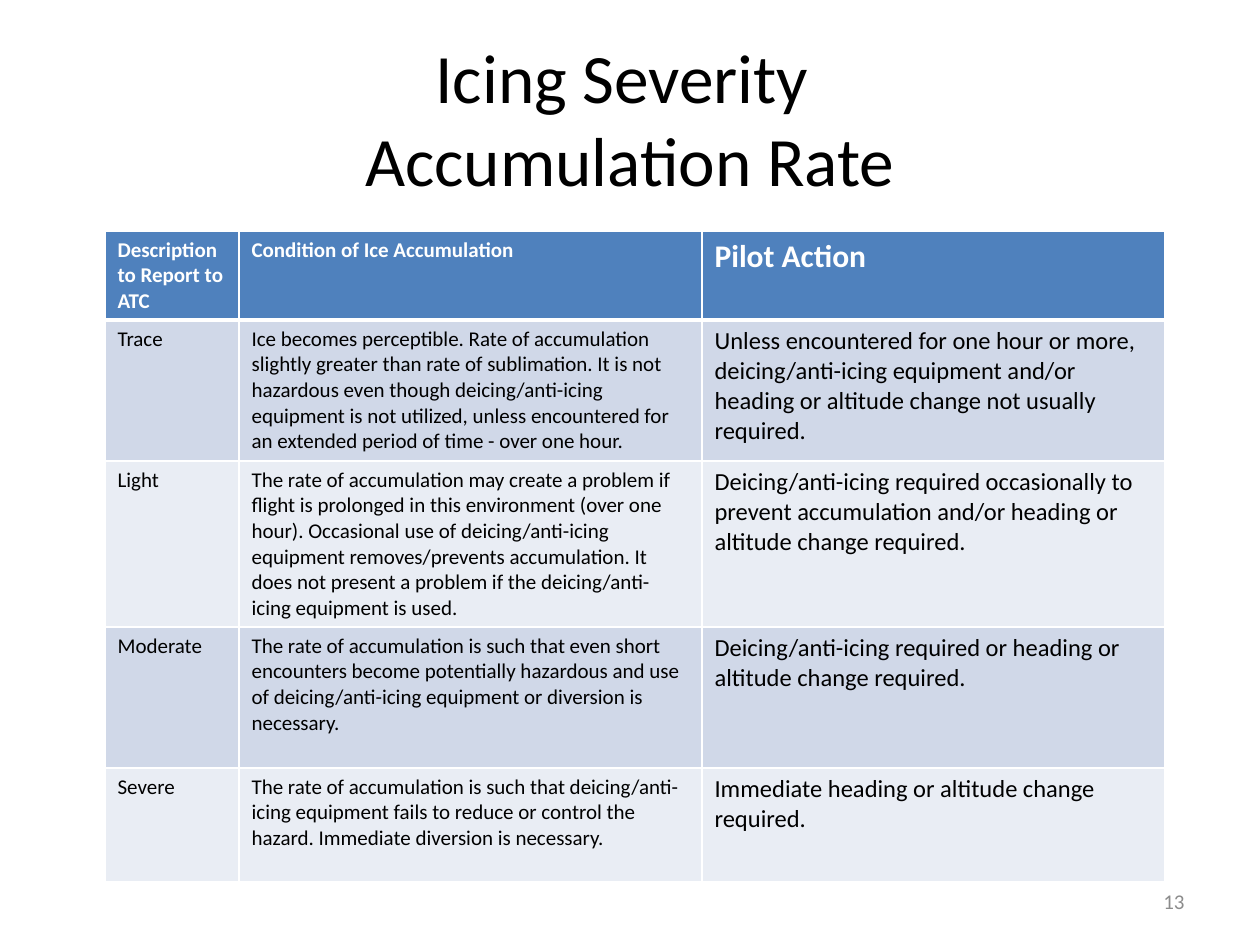
from dataclasses import dataclass

from lxml import etree
from pptx import Presentation
from pptx import util as u
from pptx.dml.color import RGBColor
from pptx.enum import text
from pptx.oxml import ns

EMU_PER_PX = 914400 / 126
FONT = "Calibri"
BLACK, WHITE, GREY = "000000", "FFFFFF", "8C8C8C"
HEADER_FILL = "4F81BD"
BAND_FILLS = ("D0D8E8", "E9EDF4")
TABLE_LEFT, TABLE_TOP = 105, 231
COLUMN_WIDTHS = (134, 463, 463)


@dataclass(frozen=True)
class Severity:
    report: str
    condition: str
    action: str
    height: int


HEADER = Severity(
    "Description to Report to ATC", "Condition of Ice Accumulation", "Pilot Action", 89
)
SEVERITIES = (
    Severity(
        "Trace",
        "Ice becomes perceptible. Rate of accumulation slightly greater than rate of "
        "sublimation. It is not hazardous even though deicing/anti-icing equipment is not "
        "utilized, unless encountered for an extended period of time - over one hour.",
        "Unless encountered for one hour or more, deicing/anti-icing equipment and/or "
        "heading or altitude change not usually required.",
        141,
    ),
    Severity(
        "Light",
        "The rate of accumulation may create a problem if flight is prolonged in this "
        "environment (over one hour). Occasional use of deicing/anti-icing equipment "
        "removes/prevents accumulation. It does not present a problem if the "
        "deicing/anti-icing equipment is used.",
        "Deicing/anti-icing required occasionally to prevent accumulation and/or heading "
        "or altitude change required.",
        166,
    ),
    Severity(
        "Moderate",
        "The rate of accumulation is such that even short encounters become potentially "
        "hazardous and use of deicing/anti-icing equipment or diversion is necessary.",
        "Deicing/anti-icing required or heading or altitude change required.",
        141,
    ),
    Severity(
        "Severe",
        "The rate of accumulation is such that deicing/anti-icing equipment fails to "
        "reduce or control the hazard. Immediate diversion is necessary.",
        "Immediate heading or altitude change required.",
        114,
    ),
)


def px(length: int) -> u.Emu:
    return u.Emu(round(length * EMU_PER_PX))


def color(value: str) -> RGBColor:
    return RGBColor.from_string(value)


def write(frame, content: str, *, size: float, ink: str = BLACK, bold: bool = False,
          align=text.PP_ALIGN.LEFT) -> None:
    frame.word_wrap = True
    frame.text = content
    paragraph = frame.paragraphs[0]
    paragraph.alignment = align
    for run in paragraph.runs:
        run.font.name = FONT
        run.font.size = u.Pt(size)
        run.font.bold = bold
        run.font.color.rgb = color(ink)


def add_label(slide, content: str, left: int, top: int, width: int, height: int,
              **style) -> None:
    frame = slide.shapes.add_textbox(px(left), px(top), px(width), px(height)).text_frame
    frame.vertical_anchor = text.MSO_ANCHOR.MIDDLE
    write(frame, content, **style)


def set_border(cell, side: str, points: int) -> None:
    line = etree.SubElement(
        cell._tc.get_or_add_tcPr(), ns.qn(f"a:ln{side}"), w=str(u.Pt(points))
    )
    fill = etree.SubElement(line, ns.qn("a:solidFill"))
    etree.SubElement(fill, ns.qn("a:srgbClr"), val=WHITE)


def fill_row(table, index: int, severity: Severity) -> None:
    is_header = index == 0
    table.rows[index].height = px(severity.height)
    background = HEADER_FILL if is_header else BAND_FILLS[(index - 1) % 2]
    sizes = (12, 12, 18 if is_header else 14)
    contents = (severity.report, severity.condition, severity.action)
    for column, (content, size) in enumerate(zip(contents, sizes)):
        cell = table.cell(index, column)
        for side in "LRTB":
            thick = (side == "B" and index == 0) or (side == "T" and index == 1)
            set_border(cell, side, 3 if thick else 1)
        cell.fill.solid()
        cell.fill.fore_color.rgb = color(background)
        write(cell.text_frame, content, size=size, bold=is_header,
              ink=WHITE if is_header else BLACK)


def add_severity_table(slide) -> None:
    levels = (HEADER, *SEVERITIES)
    table = slide.shapes.add_table(
        len(levels), len(COLUMN_WIDTHS), px(TABLE_LEFT), px(TABLE_TOP),
        px(sum(COLUMN_WIDTHS)), px(sum(level.height for level in levels)),
    ).table
    for column, width in zip(table.columns, COLUMN_WIDTHS):
        column.width = px(width)
    for index, level in enumerate(levels):
        fill_row(table, index, level)


def main() -> None:
    deck = Presentation()
    deck.slide_width, deck.slide_height = px(1260), px(945)
    slide = deck.slides.add_slide(deck.slide_layouts[6])
    add_label(slide, "Icing Severity \vAccumulation Rate", 63, 38, 1134, 158,
              size=39.6, align=text.PP_ALIGN.CENTER)
    add_label(slide, "13", 903, 876, 294, 50,
              size=12, ink=GREY, align=text.PP_ALIGN.RIGHT)
    add_severity_table(slide)
    deck.save("out.pptx")


if __name__ == "__main__":
    main()
